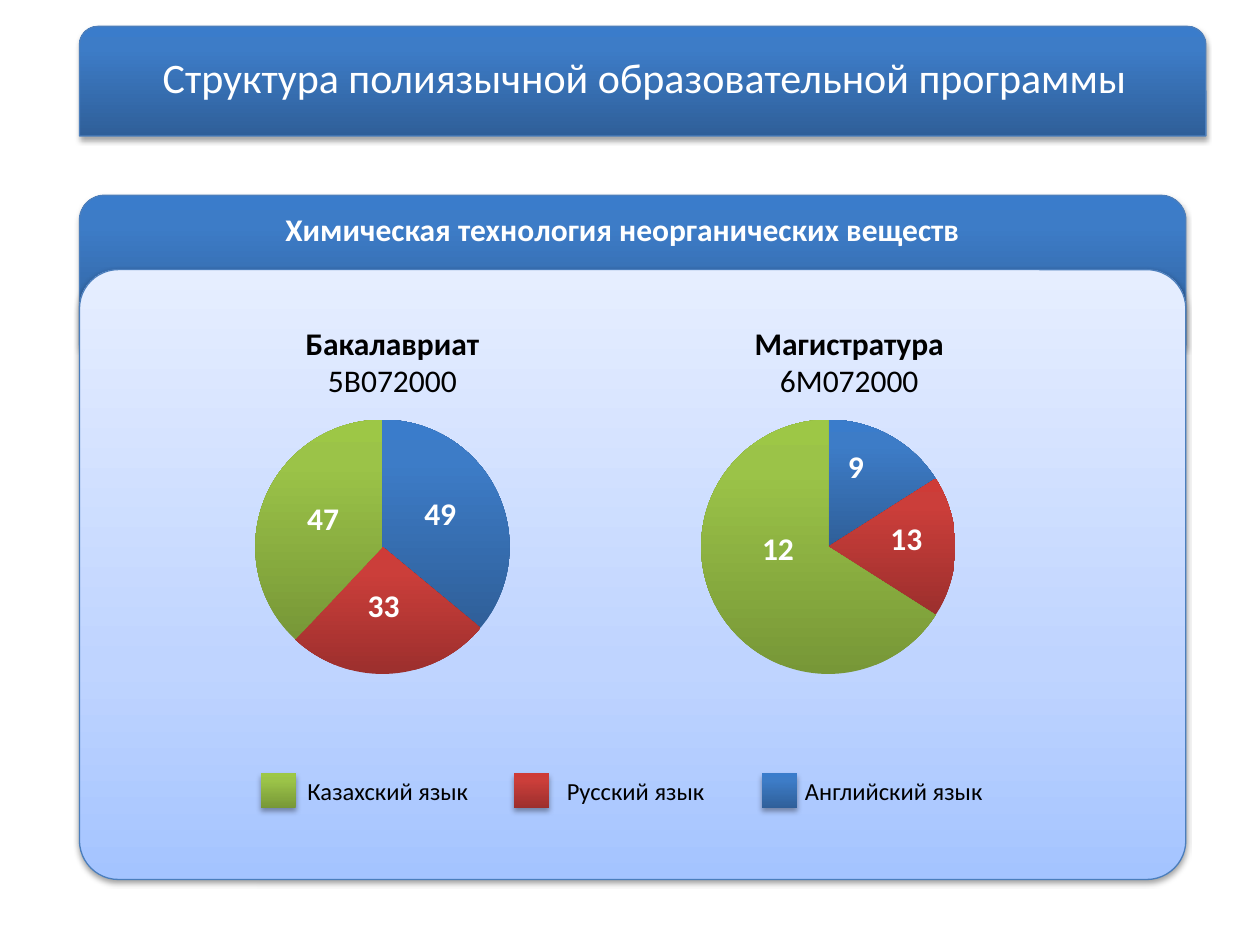
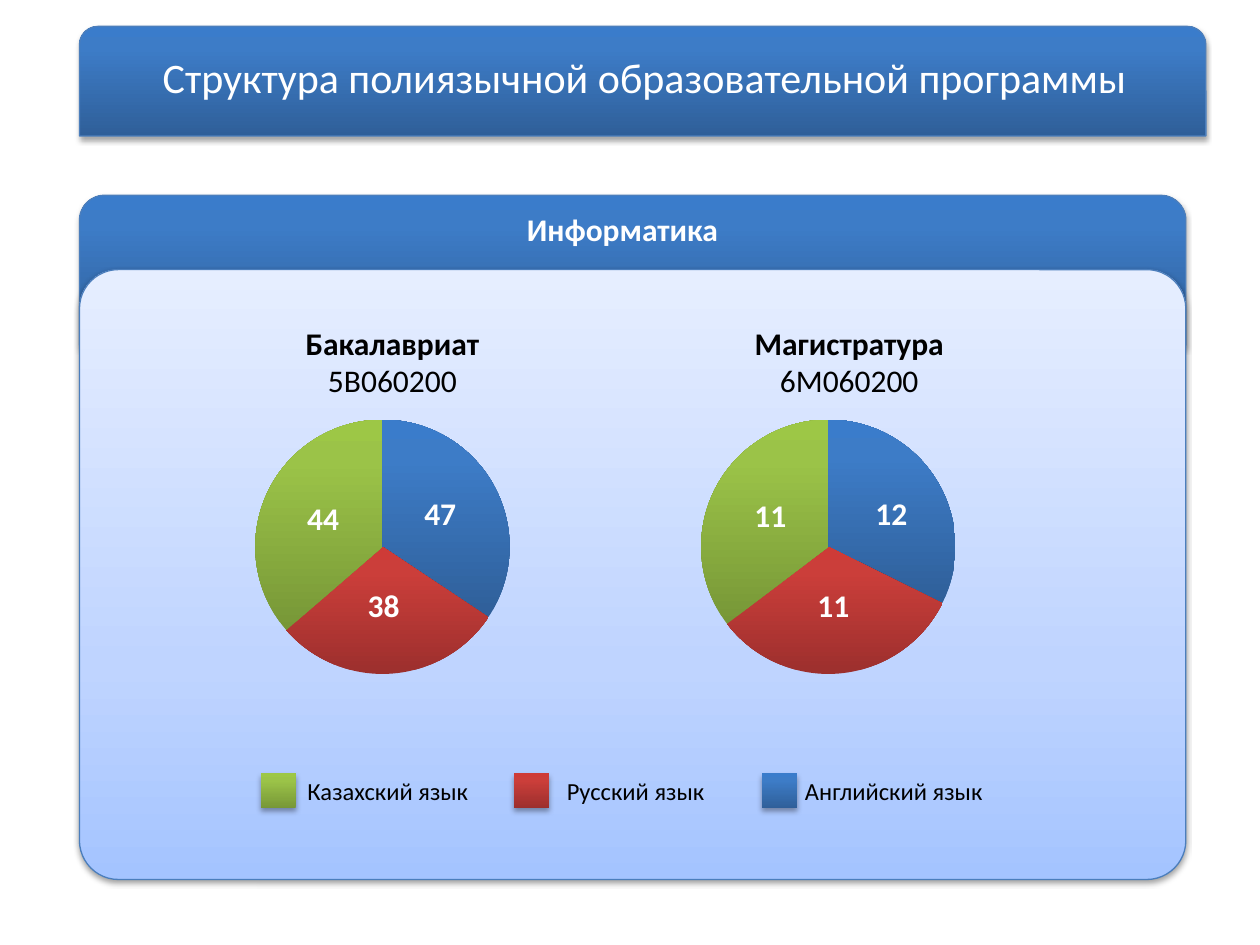
"""Builds two slides on the language structure of the degree programmes."""
import copy

import lxml.etree
import pptx
import pptx.chart.data
import pptx.dml.color
import pptx.enum.chart
import pptx.enum.shapes
import pptx.enum.text
import pptx.oxml
import pptx.oxml.ns
import pptx.util

Pt = pptx.util.Pt
SHAPES = pptx.enum.shapes.MSO_SHAPE
ALIGN = pptx.enum.text.PP_ALIGN
qn = pptx.oxml.ns.qn

FONT = "Calibri"
COLOURS = {"white": "FFFFFF", "black": "000000", "outline": "4B7EBC"}
GRADIENTS = {
    "blue": ((0, "2F5F99"), (0.8, "3D7CC7"), (1, "3A7CCB")),
    "red": ((0, "9C2F2D"), (0.8, "CB3E3A"), (1, "CE3B37")),
    "green": ((0, "779737"), (0.8, "9BC348"), (1, "9DC746")),
    "pale": ((0, "A4C4FF"), (0.35, "BFD4FF"), (1, "E6EEFF")),
}
SLICES = ("blue", "red", "green")
TITLE = "Структура полиязычной образовательной программы"
LEGEND = (
    ("green", 149, "Казахский язык", 168.5, 107.3),
    ("red", 293.8, "Русский язык", 316.8, 93.6),
    ("blue", 435.6, "Английский язык", 452.9, 116.6),
)
BACHELOR = {"level": "Бакалавриат", "chart_left": 99.4, "caption": (167, 114.5)}
MASTER = {"level": "Магистратура", "chart_left": 354.2, "caption": (423.4, 123.8)}
BACHELOR_SPOTS = ((235.4, 278.6), (203, 331.2), (168.5, 281.5))
PROGRAMMES = (
    ("Химическая технология неорганических веществ", (
        (BACHELOR, "5В072000", (36, 26, 38), ("49", "33", "47"), BACHELOR_SPOTS),
        (MASTER, "6М072000", (16, 18, 66), ("9", "13", "12"),
         ((477.4, 252), (501.8, 293), (428.4, 298.8))),
    )),
    ("Информатика", (
        (BACHELOR, "5В060200", (34, 29, 36), ("47", "38", "44"), BACHELOR_SPOTS),
        (MASTER, "6М060200", (32, 32, 35), ("12", "11", "11"),
         ((493.2, 278.6), (460, 331.2), (424, 280))),
    )),
)


def rgb(name):
    return pptx.dml.color.RGBColor.from_string(COLOURS[name])


def fill_gradient(fill, name):
    fill.gradient()
    fill.gradient_angle = 90
    stop_list = fill._xPr.find(qn("a:gradFill")).find(qn("a:gsLst"))
    stop_list.append(copy.deepcopy(stop_list[0]))
    for stop, (position, colour) in zip(fill.gradient_stops, GRADIENTS[name]):
        stop.position = position
        stop.color.rgb = pptx.dml.color.RGBColor.from_string(colour)


def add_shadow(shape, distance, opacity):
    shape.shadow.inherit = False
    effects = shape._element.spPr.find(qn("a:effectLst"))
    shadow = lxml.etree.SubElement(
        effects, qn("a:outerShdw"), blurRad=str(Pt(3.1)), dist=str(Pt(distance)),
        dir="5400000", rotWithShape="0")
    colour = lxml.etree.SubElement(shadow, qn("a:srgbClr"), val=COLOURS["black"])
    lxml.etree.SubElement(colour, qn("a:alpha"), val=str(opacity * 1000))


def add_panel(page, kind, left, top, width, height, gradient,
              outlined=True, distance=1.8, opacity=35):
    panel = page.shapes.add_shape(kind, Pt(left), Pt(top), Pt(width), Pt(height))
    fill_gradient(panel.fill, gradient)
    if outlined:
        panel.line.color.rgb = rgb("outline")
        panel.line.width = Pt(0.75)
    else:
        panel.line.fill.background()
    add_shadow(panel, distance, opacity)
    return panel


def write_text(box, lines, size=18, colour="black", bold=(False,), align=ALIGN.LEFT, wrap=False):
    frame = box.text_frame
    frame.word_wrap = wrap
    frame.auto_size = pptx.enum.text.MSO_AUTO_SIZE.SHAPE_TO_FIT_TEXT
    frame.vertical_anchor = pptx.enum.text.MSO_ANCHOR.TOP
    for number, (line, is_bold) in enumerate(zip(lines, bold)):
        para = frame.add_paragraph() if number else frame.paragraphs[0]
        para.alignment = align
        span = para.add_run()
        span.text = line
        span.font.name = FONT
        span.font.size = Pt(size)
        span.font.bold = is_bold
        span.font.color.rgb = rgb(colour)


def add_text(page, lines, left, top, width, height, **style):
    box = page.shapes.add_textbox(Pt(left), Pt(top), Pt(width), Pt(height))
    write_text(box, lines, **style)


def add_title(page):
    add_panel(page, SHAPES.ROUND_2_SAME_RECTANGLE, 45.4, 15.1, 643.7, 62.6, "blue")
    title = page.shapes.title
    title.left, title.top, title.width, title.height = Pt(79.2), Pt(25.9), Pt(578.2), Pt(36)
    write_text(title, [TITLE], size=24, colour="white", align=ALIGN.CENTER, wrap=True)
    page.shapes._spTree.append(title._element)


def add_card(page, heading):
    add_panel(page, SHAPES.ROUND_2_SAME_RECTANGLE, 45.4, 111.6, 632.2, 85.7, "blue")
    body = add_panel(page, SHAPES.ROUNDED_RECTANGLE, 45.4, 154.1, 632.2, 348.5, "pale",
                     distance=1.6, opacity=38)
    body.adjustments[0] = 0.064
    add_text(page, [heading], 79.2, 116.6, 553, 28.8, colour="white", bold=[True],
             align=ALIGN.CENTER, wrap=True)


def set_plot_area(chart, **fractions):
    plot_area = chart._chartSpace.chart.plotArea
    for old in plot_area.findall(qn("c:layout")):
        plot_area.remove(old)
    layout = pptx.oxml.parse_xml(f"<c:layout {pptx.oxml.ns.nsdecls('c')}/>")
    manual = lxml.etree.SubElement(layout, qn("c:manualLayout"))
    settings = {"layoutTarget": "inner", "xMode": "edge", "yMode": "edge", **fractions}
    for tag, value in settings.items():
        lxml.etree.SubElement(manual, qn(f"c:{tag}"), val=str(value))
    plot_area.insert(0, layout)


def add_pie(page, left, shares):
    chart_data = pptx.chart.data.CategoryChartData()
    chart_data.categories = ["1", "2", "3"]
    chart_data.add_series("Series 1", shares)
    chart = page.shapes.add_chart(
        pptx.enum.chart.XL_CHART_TYPE.PIE, Pt(left), Pt(230.4), Pt(238.3), Pt(164.2),
        chart_data).chart
    chart.has_title = False
    chart.has_legend = False
    chart.font.name = FONT
    chart.font.size = Pt(18)
    chart.font.color.rgb = rgb("black")
    set_plot_area(chart, x=0.195, y=0.057, w=0.61, h=0.886)
    for number, gradient in enumerate(SLICES):
        point_format = chart.plots[0].series[0].points[number].format
        fill_gradient(point_format.fill, gradient)
        point_format.line.fill.background()


def add_degree(page, degree, code, shares, labels, spots):
    add_pie(page, degree["chart_left"], shares)
    left, width = degree["caption"]
    add_text(page, [degree["level"], code], left, 181.4, width, 51.1,
             bold=(True, False), align=ALIGN.CENTER)
    for label, (label_left, label_top) in zip(labels, spots):
        add_text(page, [label], label_left, label_top, 15 + 9 * len(label), 28.8,
                 colour="white", bold=[True])


def add_legend(page):
    for gradient, swatch_left, language, text_left, text_width in LEGEND:
        add_panel(page, SHAPES.RECTANGLE, swatch_left, 442, 20, 20, gradient, outlined=False)
        add_text(page, [language], text_left, 440, text_width, 24.5, size=14)


def main():
    deck = pptx.Presentation()
    deck.slide_width, deck.slide_height = Pt(720), Pt(540)
    for heading, degrees in PROGRAMMES:
        page = deck.slides.add_slide(deck.slide_layouts[5])
        add_title(page)
        add_card(page, heading)
        for degree in degrees:
            add_degree(page, *degree)
        add_legend(page)
    deck.save("out.pptx")


if __name__ == "__main__":
    main()
